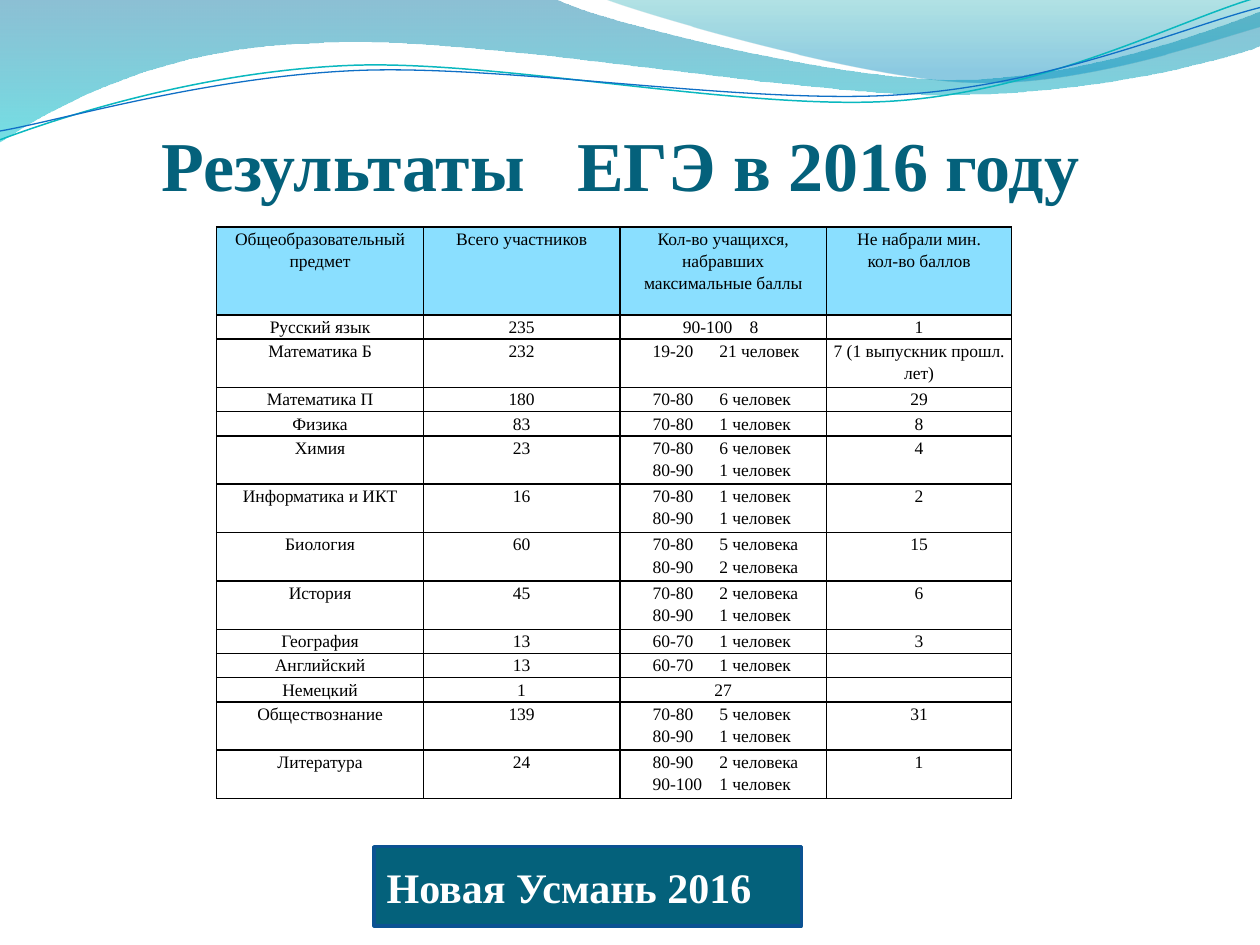
from math import ceil

from lxml.etree import SubElement
from pptx import Presentation
from pptx.dml.color import RGBColor
from pptx.enum.shapes import MSO_SHAPE
from pptx.enum.text import MSO_ANCHOR, MSO_AUTO_SIZE, PP_ALIGN
from pptx.oxml.ns import qn
from pptx.util import Pt

PX = 9144  # EMU per px, 100 px to the inch
FONT = "Times New Roman"
TEAL = RGBColor(0x04, 0x61, 0x7B)
BOX_EDGE = RGBColor(0x0B, 0x52, 0x92)
HEADER_BLUE = RGBColor(0x8A, 0xDF, 0xFF)
BLACK = RGBColor(0, 0, 0)
WHITE = RGBColor(0xFF, 0xFF, 0xFF)
LINE_TEAL = RGBColor(0x0A, 0xB8, 0xBF)
LINE_BLUE = RGBColor(0x0F, 0x6F, 0xC6)

# Outlines: a pair is a straight step, six numbers are a Bezier curve.
# Gradient stops: position, colour, opacity in percent.
BANDS = [
    ([(0, 0), (440, -1), (476, 17, 664, 63, 758, 63), (853, 63, 958, 26, 1000, 9),
      (1001, 36), (983, 44, 870, 76, 746, 75), (622, 75, 382, 28, 257, 34),
      (129, 36, 46, 83, -1, 113)],
     [(0, RGBColor(0x00, 0x74, 0xA1), 45), (1, RGBColor(0x00, 0xC6, 0xCF), 55)]),
    ([(479, -1), (509, 11, 682, 62, 769, 65), (856, 69, 961, 32, 1000, 21), (1000, 0)],
     [(0, RGBColor(0x00, 0xA1, 0xA9), 30), (0.8, RGBColor(0x00, 0x8B, 0xBF), 45)]),
]
STRANDS = [
    ([(0, 111), (48, 93, 158, 57, 277, 52), (395, 47, 593, 89, 713, 80),
      (833, 71, 938, 15, 998, -2)], LINE_TEAL, 0.85),
    ([(0, 104), (47, 96, 164, 61, 283, 56), (403, 51, 597, 84, 717, 75),
      (836, 67, 941, 21, 1000, 6)], LINE_BLUE, 0.75),
]

COLUMN_WIDTHS = [164, 156, 164, 147]
HEADER_HEIGHT = 70
LETTERS_PER_LINE = 22
RESULTS = [
    ("Общеобразовательный предмет", "Всего участников",
     "Кол-во учащихся, набравших\vмаксимальные баллы", "Не набрали мин.\nкол-во баллов"),
    ("Русский язык", "235", "90-100\t8", "1"),
    ("Математика Б", "232", "19-20\t21 человек", "7 (1 выпускник прошл. лет)"),
    ("Математика П", "180", "70-80\t6 человек", "29"),
    ("Физика", "83", "70-80\t1 человек", "8"),
    ("Химия", "23", "70-80\t6 человек\n80-90\t1 человек", "4"),
    ("Информатика и ИКТ", "16", "70-80\t1 человек\n80-90\t1 человек", "2"),
    ("Биология", "60", "70-80\t5 человека\n80-90\t2 человека", "15"),
    ("История", "45", "70-80\t2 человека\n80-90\t1 человек", "6"),
    ("География", "13", "60-70\t1 человек", "3"),
    ("Английский", "13", "60-70\t1 человек", ""),
    ("Немецкий", "1", "27", ""),
    ("Обществознание", "139", "70-80\t5 человек\n80-90\t1 человек", "31"),
    ("Литература", "24", "80-90\t2 человека\n90-100\t1 человек", "1"),
]


def place(shape, box):
    shape.left, shape.top, shape.width, shape.height = (value * PX for value in box)


def format_runs(paragraph, size, color, bold=False):
    for run in paragraph.runs:
        font = run.font
        font.name, font.size, font.bold = FONT, Pt(size), bold
        font.color.rgb = color


def add_tab(paragraph, position):
    tabs = SubElement(paragraph._p.get_or_add_pPr(), qn("a:tabLst"))
    SubElement(tabs, qn("a:tab"), pos=str(position * PX), algn="l")


def add_outline(slide, origin, outline, close):
    """Build a freeform, then join the three steps of each curve into one Bezier."""
    left, top = origin
    points = [((left + x) * PX, (top + y) * PX)
              for part in outline for x, y in zip(part[::2], part[1::2])]
    builder = slide.shapes.build_freeform(*points[0])
    builder.add_line_segments(points[1:], close=False)
    shape = builder.convert_to_shape()
    shape.shadow.inherit = False
    path = next(shape._element.iter(qn("a:path")))
    steps = iter(path.findall(qn("a:lnTo")))
    for part in outline[1:]:
        targets = [next(steps) for _ in range(len(part) // 2)]
        if len(targets) == 3:
            curve = SubElement(path, qn("a:cubicBezTo"))
            path.replace(targets[0], curve)
            for target in targets:
                curve.append(target[0])
            for target in targets[1:]:
                path.remove(target)
    if close:
        SubElement(path, qn("a:close"))
    return shape


def move_to_master(shape, master):
    shape_id = max(other.shape_id for other in master.shapes) + 1
    shape._element.nvSpPr.cNvPr.set("id", str(shape_id))
    master.shapes._spTree.append(shape._element)


def add_waves(slide, origin):
    master = slide.slide_layout.slide_master
    for outline, stops in BANDS:
        band = add_outline(slide, origin, outline, True)
        band.line.fill.background()
        band.fill.gradient()
        band.fill.gradient_angle = 270
        for stop, (position, color, opacity) in zip(band.fill.gradient_stops, stops):
            stop.position = position
            stop.color.rgb = color
            rgb = stop._gs.find(qn("a:srgbClr"))
            SubElement(rgb, qn("a:alpha"), val=str(opacity * 1000))
        move_to_master(band, master)
    for outline, color, width in STRANDS:
        strand = add_outline(slide, origin, outline, False)
        strand.fill.background()
        strand.line.color.rgb = color
        strand.line.width = Pt(width)
        move_to_master(strand, master)


def set_title(slide, box):
    title = slide.shapes.title
    place(title, box)
    frame = title.text_frame
    frame.text = "Результаты\tЕГЭ в 2016 году"
    frame.auto_size = MSO_AUTO_SIZE.NONE
    frame.vertical_anchor = MSO_ANCHOR.BOTTOM
    frame.margin_left, frame.margin_top = 97 * PX, 5 * PX
    frame.margin_right = frame.margin_bottom = 0
    paragraph = frame.paragraphs[0]
    paragraph.alignment = PP_ALIGN.LEFT
    add_tab(paragraph, 330)
    format_runs(paragraph, 40, TEAL, bold=True)


def add_borders(cell):
    properties = cell._tc.get_or_add_tcPr()
    for side in ("lnL", "lnR", "lnT", "lnB"):
        line = SubElement(properties, qn(f"a:{side}"), w=str(Pt(1)))
        fill = SubElement(line, qn("a:solidFill"))
        SubElement(fill, qn("a:srgbClr"), val=str(BLACK))


def fill_cell(cell, text, is_header):
    cell.text = text
    cell.margin_left = cell.margin_right = 5 * PX
    cell.margin_top = cell.margin_bottom = 0
    has_tab = "\t" in text
    if has_tab:
        cell.margin_left = (26 if "человек" in text else 50) * PX
    for paragraph in cell.text_frame.paragraphs:
        paragraph.alignment = PP_ALIGN.LEFT if has_tab else PP_ALIGN.CENTER
        paragraph.line_spacing = 1.15
        if has_tab:
            add_tab(paragraph, 53)
        format_runs(paragraph, 10, BLACK)
        if not text:
            SubElement(paragraph._p, qn("a:endParaRPr"), sz="1000")
    add_borders(cell)
    if is_header:
        cell.fill.solid()
        cell.fill.fore_color.rgb = HEADER_BLUE
    else:
        cell.fill.background()


def count_lines(text):
    return sum(ceil(len(line) / LETTERS_PER_LINE) for line in text.splitlines())


def add_results_table(slide, left, top, height):
    lines = [max(map(count_lines, row)) for row in RESULTS[1:]]
    line_height = (height - HEADER_HEIGHT) * PX // sum(lines)
    row_heights = [HEADER_HEIGHT * PX] + [count * line_height for count in lines]
    box = (left, top, sum(COLUMN_WIDTHS), height)
    table = slide.shapes.add_table(len(RESULTS), len(COLUMN_WIDTHS),
                                   *(value * PX for value in box)).table
    table.first_row = table.horz_banding = False
    for column, width in zip(table.columns, COLUMN_WIDTHS):
        column.width = width * PX
    for index, (row, row_height, texts) in enumerate(zip(table.rows, row_heights, RESULTS)):
        row.height = row_height
        for cell, text in zip(row.cells, texts):
            fill_cell(cell, text, index == 0)


def add_place_label(slide, box):
    label = slide.shapes.add_shape(MSO_SHAPE.RECTANGLE, *(value * PX for value in box))
    label.shadow.inherit = False
    label.fill.solid()
    label.fill.fore_color.rgb = TEAL
    label.line.color.rgb = BOX_EDGE
    label.line.width = Pt(2)
    frame = label.text_frame
    frame.text = "Новая Усмань 2016"
    frame.vertical_anchor = MSO_ANCHOR.MIDDLE
    frame.paragraphs[0].alignment = PP_ALIGN.LEFT
    format_runs(frame.paragraphs[0], 24, WHITE, bold=True)


def main():
    presentation = Presentation()
    presentation.slide_width, presentation.slide_height = 1000 * PX, 750 * PX
    slide = presentation.slides.add_slide(presentation.slide_layouts[5])
    add_waves(slide, (0, 0))
    set_title(slide, (31, 78, 900, 85))
    add_results_table(slide, 172, 180, 454)
    add_place_label(slide, (297, 672, 339, 63))
    presentation.save("out.pptx")


if __name__ == "__main__":
    main()
